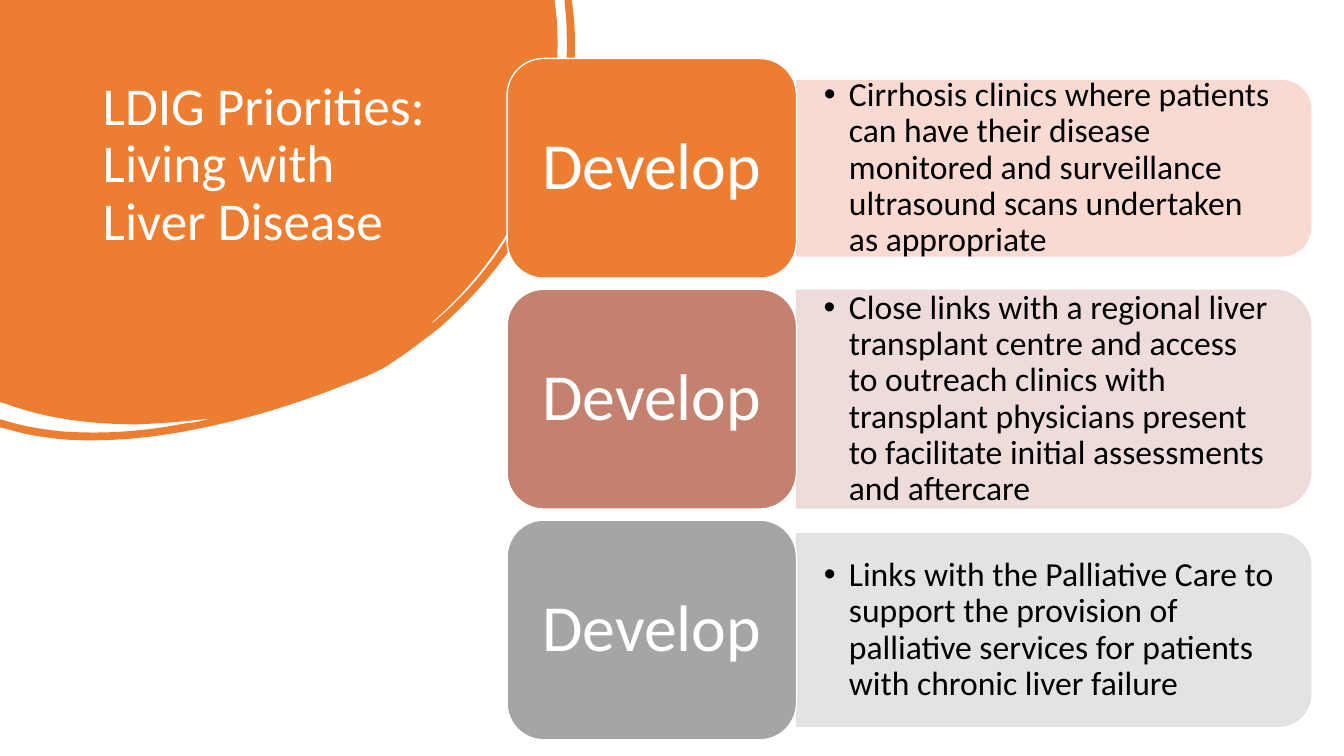
from dataclasses import dataclass

from lxml import etree
from pptx import Presentation
from pptx import util as u
from pptx.dml.color import RGBColor
from pptx.enum import shapes, text
from pptx.oxml.ns import qn

COLORS = {
    "orange": "ED7D31", "rose": "C48170", "grey": "A5A5A5",
    "peach": "F8D7CE", "blush": "EDD9D7", "silver": "E1E1E1",
    "white": "FFFFFF", "black": "000000",
}
FONT = "Calibri"
CARD_LEFT, CARD_WIDTH, CARD_HEIGHT = 5.03, 2.87, 2.18
FIRST_CENTRE, ROW_STEP = 1.67, 2.29
PANEL_LEFT, PANEL_WIDTH = CARD_LEFT + CARD_WIDTH, 5.1
CORNER_INSET = 0.05  # share of the panel height taken by its rounded corners
BLOB_WIDTH, BLOB_HEIGHT = 5.71, 4.37


@dataclass
class Priority:
    heading: str
    detail: str
    card_color: str
    panel_color: str
    panel_height: float


PRIORITIES = [
    Priority("Develop", "Cirrhosis clinics where patients can have their disease monitored "
             "and surveillance ultrasound scans undertaken as appropriate",
             "orange", "peach", 1.74),
    Priority("Develop", "Close links with a regional liver transplant centre and access to "
             "outreach clinics with transplant physicians present to facilitate initial "
             "assessments and aftercare", "rose", "blush", 2.16),
    Priority("Develop", "Links with the Palliative Care to support the provision of palliative "
             "services for patients with chronic liver failure", "grey", "silver", 1.91),
]

# Outline from the top-left corner: one point is a line, three are a Bézier curve
BLOB_OUTLINE = [
    [(5.5, 0)], [(5.52, 0.17)],
    [(5.53, 0.26), (5.53, 0.36), (5.53, 0.45)],
    [(5.53, 1.01), (5.42, 1.54), (5.18, 2.04)],
    [(4.96, 2.49), (4.65, 2.88), (4.27, 3.21)],
    [(4.29, 3.21), (4.3, 3.19), (4.32, 3.18)],
    [(4.59, 2.95), (4.82, 2.69), (5.01, 2.39)],
    [(5.43, 1.76), (5.65, 1.07), (5.62, 0.3)],
    [(5.62, 0.21), (5.61, 0.12), (5.6, 0.03)],
    [(5.6, 0)], [(5.67, 0)], [(5.68, 0.07)],
    [(5.74, 0.54), (5.68, 1.02), (5.53, 1.5)],
    [(5.33, 2.14), (4.97, 2.68), (4.48, 3.14)],
    [(4.39, 3.23), (4.29, 3.31), (4.19, 3.38)],
    [(4.09, 3.46), (3.99, 3.53), (3.87, 3.61)],
    [(3.75, 3.69), (3.6, 3.75), (3.44, 3.81)],
    [(2.99, 3.99), (2.52, 4.14), (2.03, 4.24)],
    [(1.57, 4.34), (1.1, 4.39), (0.63, 4.36)],
    [(0.45, 4.34), (0.28, 4.32), (0.12, 4.27)],
    [(0, 4.24)], [(0, 4.16)], [(0.04, 4.17)],
    [(0.23, 4.23), (0.42, 4.26), (0.61, 4.28)],
    [(1.03, 4.31), (1.43, 4.28), (1.84, 4.2)],
    [(1.89, 4.2), (1.93, 4.19), (1.98, 4.18)],
    [(2.02, 4.17), (2.06, 4.16), (2.1, 4.15)],
    [(1.86, 4.18), (1.61, 4.2), (1.36, 4.21)],
    [(0.92, 4.21), (0.48, 4.16), (0.07, 4.01)],
    [(0, 3.99)],
]


def rgb(name: str) -> RGBColor:
    return RGBColor.from_string(COLORS[name])


def paint(sp, fill: str, line: str = "", alpha: int = 100) -> None:
    sp.shadow.inherit = False
    sp.fill.solid()
    sp.fill.fore_color.rgb = rgb(fill)
    if line:
        sp.line.color.rgb = rgb(line)
        sp.line.width = u.Pt(1)
    else:
        sp.line.fill.background()
    if alpha < 100:
        for clr in sp._element.spPr.iter(qn("a:srgbClr")):
            etree.SubElement(clr, qn("a:alpha")).set("val", str(alpha * 1000))


def write(sp, words: str, size: float, color: str, inset_x: float, inset_y: float,
          anchor=text.MSO_ANCHOR.MIDDLE, align=text.PP_ALIGN.LEFT):
    tf = sp.text_frame
    tf.word_wrap = True
    tf.vertical_anchor = anchor
    tf.margin_left = tf.margin_right = u.Inches(inset_x)
    tf.margin_top = tf.margin_bottom = u.Inches(inset_y)
    p = tf.paragraphs[0]
    p.alignment = align
    p.line_spacing = 0.9
    r = p.add_run()
    r.text = words
    r.font.name, r.font.size = FONT, u.Pt(size)
    r.font.color.rgb = rgb(color)
    return p


def add_bullet(p) -> None:
    pPr = p._p.get_or_add_pPr()
    pPr.set("marL", str(u.Inches(0.25)))
    pPr.set("indent", str(u.Inches(-0.25)))
    etree.SubElement(pPr, qn("a:buFont")).set("typeface", "Arial")
    etree.SubElement(pPr, qn("a:buChar")).set("char", "•")


def add_blob(s) -> None:
    points = [(u.Inches(x), u.Inches(y)) for seg in BLOB_OUTLINE for x, y in seg]
    builder = s.shapes.build_freeform(0, 0)
    builder.add_line_segments(points, close=True)
    blob = builder.convert_to_shape()
    paint(blob, "orange")

    # Merge each triple of line points into one curve
    outline = next(blob._element.iter(qn("a:path")))
    lines = iter(outline.findall(qn("a:lnTo")))
    for seg in BLOB_OUTLINE:
        first, *rest = [next(lines) for _ in seg]
        if rest:
            first.tag = qn("a:cubicBezTo")
            for line in rest:
                first.append(line[0])
                outline.remove(line)

    # Fit the frame to the curves instead of their control points
    blob.width, blob.height = u.Inches(BLOB_WIDTH), u.Inches(BLOB_HEIGHT)
    outline.set("w", str(blob.width))
    outline.set("h", str(blob.height))


def add_priority(s, item: Priority, centre: float) -> None:
    # Panel, a top-rounded rectangle turned to round its right side
    height = item.panel_height
    panel = s.shapes.add_shape(
        shapes.MSO_SHAPE.ROUND_2_SAME_RECTANGLE,
        u.Inches(PANEL_LEFT + (PANEL_WIDTH - height) / 2), u.Inches(centre - PANEL_WIDTH / 2),
        u.Inches(height), u.Inches(PANEL_WIDTH))
    panel.rotation = 90
    paint(panel, item.panel_color, item.panel_color, alpha=90)

    # Bulleted detail
    inset = CORNER_INSET * height
    detail = s.shapes.add_textbox(
        u.Inches(PANEL_LEFT), u.Inches(centre - height / 2 + inset),
        u.Inches(PANEL_WIDTH - inset), u.Inches(height - 2 * inset))
    add_bullet(write(detail, item.detail, 24, "black", 0.27, 0.14))

    # Heading card
    card = s.shapes.add_shape(
        shapes.MSO_SHAPE.ROUNDED_RECTANGLE,
        u.Inches(CARD_LEFT), u.Inches(centre - CARD_HEIGHT / 2),
        u.Inches(CARD_WIDTH), u.Inches(CARD_HEIGHT))
    paint(card, item.card_color, "white")
    write(card, item.heading, 47, "white", 0.2, 0.1, align=text.PP_ALIGN.CENTER)


def main() -> None:
    prs = Presentation()
    prs.slide_width, prs.slide_height = u.Inches(13.33), u.Inches(7.5)
    s = prs.slides.add_slide(prs.slide_layouts[6])

    # Corner blob
    add_blob(s)

    # Title
    title = s.shapes.add_textbox(u.Inches(0.92), u.Inches(0.74), u.Inches(3.52), u.Inches(2.22))
    write(title, "LDIG Priorities: Living with Liver Disease", 38, "white", 0.1, 0.05,
          anchor=text.MSO_ANCHOR.TOP)

    # Priority rows
    for row, item in enumerate(PRIORITIES):
        add_priority(s, item, FIRST_CENTRE + row * ROW_STEP)

    prs.save("out.pptx")


if __name__ == "__main__":
    main()
